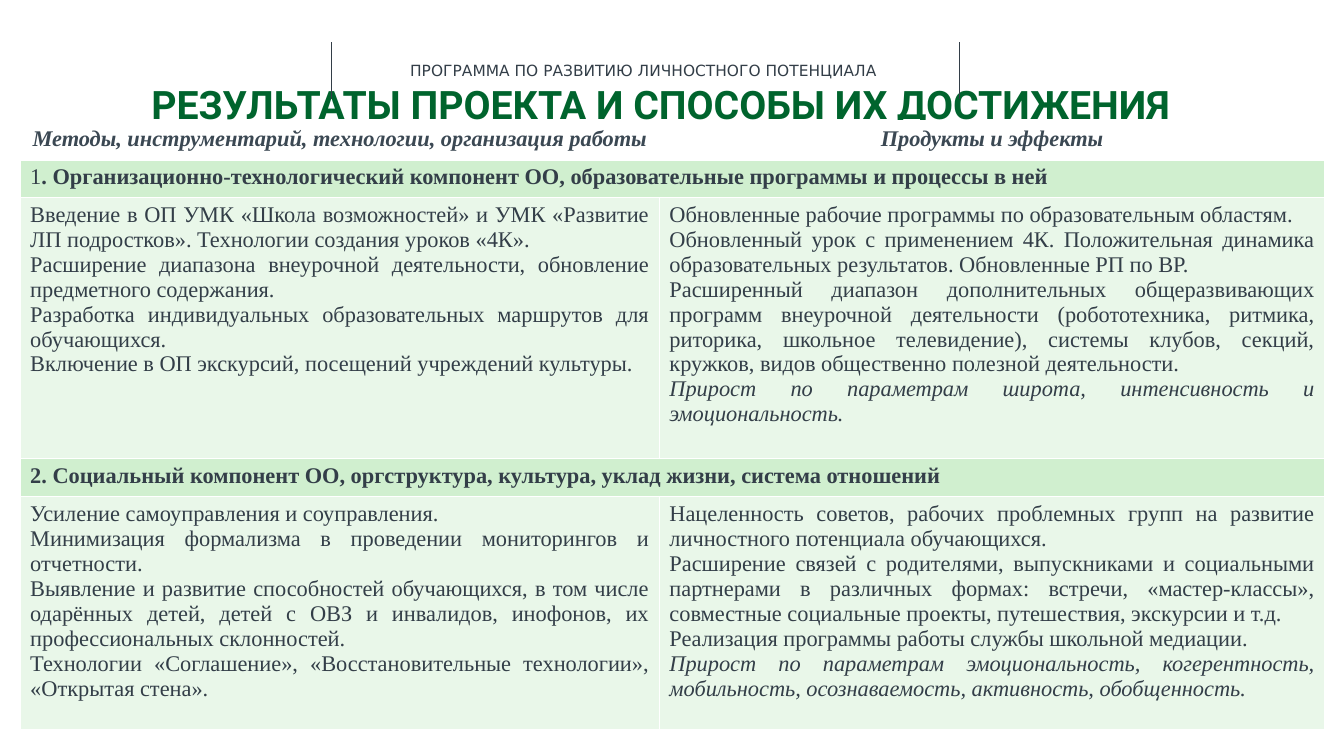
from lxml import etree
from pptx import Presentation
from pptx.dml.color import RGBColor
from pptx.enum.shapes import MSO_CONNECTOR
from pptx.enum.text import MSO_ANCHOR, MSO_AUTO_SIZE, PP_ALIGN
from pptx.oxml.ns import qn
from pptx.util import Inches, Pt

COLORS = {
    "text": "333E48",
    "heading": "3B4853",
    "title": "00642D",
    "white": "FFFFFF",
    "section": "D0EFCF",
    "body": "E9F7E9",
}


def add_text(paragraph, text, name, size, color, bold=False, italic=False):
    run = paragraph.add_run()
    run.text = text
    values = {"name": name, "size": Pt(size), "bold": bold, "italic": italic}
    for attribute, value in values.items():
        setattr(run.font, attribute, value)
    run.font.color.rgb = RGBColor.from_string(COLORS[color])


def set_borders(cell, bottom_width):
    properties = cell._tc.get_or_add_tcPr()
    widths = {"lnL": 1, "lnR": 1, "lnT": 1, "lnB": bottom_width}
    for side, width in widths.items():
        line = etree.SubElement(properties, qn(f"a:{side}"), w=str(Pt(width)))
        fill = etree.SubElement(line, qn("a:solidFill"))
        etree.SubElement(fill, qn("a:srgbClr"), val=COLORS["white"])


presentation = Presentation()
presentation.slide_width = Inches(13.33)
presentation.slide_height = Inches(7.5)
slide = presentation.slides.add_slide(presentation.slide_layouts[5])

title = slide.shapes.title
title_box = {"left": 0.3, "top": 0.85, "width": 12.5, "height": 0.42}
for attribute, value in title_box.items():
    setattr(title, attribute, Inches(value))
title_format = {
    "margin_left": 0,
    "margin_top": 0,
    "margin_right": 0,
    "margin_bottom": 0,
    "word_wrap": True,
    "auto_size": MSO_AUTO_SIZE.NONE,
    "vertical_anchor": MSO_ANCHOR.TOP,
}
for attribute, value in title_format.items():
    setattr(title.text_frame, attribute, value)
paragraph = title.text_frame.paragraphs[0]
paragraph.alignment = PP_ALIGN.CENTER
paragraph.line_spacing = 0.9
paragraph.space_before = Pt(0)
add_text(paragraph, "РЕЗУЛЬТАТЫ ПРОЕКТА И СПОСОБЫ ИХ ДОСТИЖЕНИЯ", "Roboto", 28, "title", bold=True)

for x in (3.29, 9.52):
    divider = slide.shapes.add_connector(
        MSO_CONNECTOR.STRAIGHT, Inches(x), Inches(0.42), Inches(x), Inches(0.98)
    )
    divider.line.color.rgb = RGBColor.from_string(COLORS["text"])
    divider.line.width = Pt(0.5)
    etree.SubElement(divider._element.spPr, qn("a:effectLst"))

program = slide.shapes.add_textbox(Inches(3.97), Inches(0.56), Inches(4.87), Inches(0.29))
program.text_frame.word_wrap = True
add_text(
    program.text_frame.paragraphs[0],
    "ПРОГРАММА ПО РАЗВИТИЮ ЛИЧНОСТНОГО ПОТЕНЦИАЛА",
    "DejaVu Sans", 11, "text",
)

rows = [
    ("heading", 0.38, [
        ["Методы, инструментарий, технологии, организация работы"],
        ["Продукты и эффекты"],
    ]),
    ("section", 0.38, [
        ["1. Организационно-технологический компонент ОО, образовательные программы и процессы в ней"],
    ]),
    ("body", 2.59, [
        [
            "Введение в ОП УМК «Школа возможностей» и УМК «Развитие ЛП подростков». Технологии создания уроков «4К».",
            "Расширение диапазона внеурочной деятельности, обновление предметного содержания.",
            "Разработка индивидуальных образовательных маршрутов для обучающихся.",
            "Включение в ОП экскурсий, посещений учреждений культуры.",
        ],
        [
            "Обновленные рабочие программы по образовательным областям.",
            "Обновленный урок с применением 4К. Положительная динамика образовательных результатов. Обновленные РП по ВР.",
            "Расширенный диапазон дополнительных общеразвивающих программ внеурочной деятельности (робототехника, ритмика, риторика, школьное телевидение), системы клубов, секций, кружков, видов общественно полезной деятельности.",
            "Прирост по параметрам широта, интенсивность и эмоциональность.",
        ],
    ]),
    ("section", 0.38, [
        ["2. Социальный компонент ОО, оргструктура, культура, уклад жизни, система отношений"],
    ]),
    ("body", 2.31, [
        [
            "Усиление самоуправления и соуправления.",
            "Минимизация формализма в проведении мониторингов и отчетности.",
            "Выявление и развитие способностей обучающихся, в том числе одарённых детей, детей с ОВЗ и инвалидов, инофонов, их профессиональных склонностей.",
            "Технологии «Соглашение», «Восстановительные технологии», «Открытая стена».",
        ],
        [
            "Нацеленность советов, рабочих проблемных групп на развитие личностного потенциала обучающихся.",
            "Расширение связей с родителями, выпускниками и социальными партнерами в различных формах: встречи, «мастер-классы», совместные социальные проекты, путешествия, экскурсии и т.д.",
            "Реализация программы работы службы школьной медиации.",
            "Прирост по параметрам эмоциональность, когерентность, мобильность, осознаваемость, активность, обобщенность.",
        ],
    ]),
]
styles = {
    "heading": {"fill": "white", "color": "heading", "align": PP_ALIGN.CENTER, "bottom": 3},
    "section": {"fill": "section", "color": "text", "align": PP_ALIGN.LEFT, "bottom": 1},
    "body": {"fill": "body", "color": "text", "align": PP_ALIGN.JUSTIFY, "bottom": 1},
}

table = slide.shapes.add_table(
    len(rows), 2, Inches(0.2), Inches(1.2), Inches(12.94), Inches(6.05)
).table
for column, width in zip(table.columns, (6.34, 6.6)):
    column.width = Inches(width)

for row_index, (kind, height, texts) in enumerate(rows):
    style = styles[kind]
    table.rows[row_index].height = Inches(height)
    for cell in table.rows[row_index].cells:
        set_borders(cell, style["bottom"])
        cell.fill.solid()
        cell.fill.fore_color.rgb = RGBColor.from_string(COLORS[style["fill"]])
    if len(texts) == 1:
        table.cell(row_index, 0).merge(table.cell(row_index, 1))
    for column_index, lines in enumerate(texts):
        frame = table.cell(row_index, column_index).text_frame
        for line_index, line in enumerate(lines):
            paragraph = frame.add_paragraph() if line_index else frame.paragraphs[0]
            paragraph.alignment = style["align"]
            bold = kind != "body"
            italic = kind == "heading" or line.startswith("Прирост")
            if line.startswith("1."):
                add_text(paragraph, "1", "Times New Roman", 16, style["color"])
                line = line[1:]
            add_text(paragraph, line, "Times New Roman", 16, style["color"], bold, italic)

presentation.save("out.pptx")
